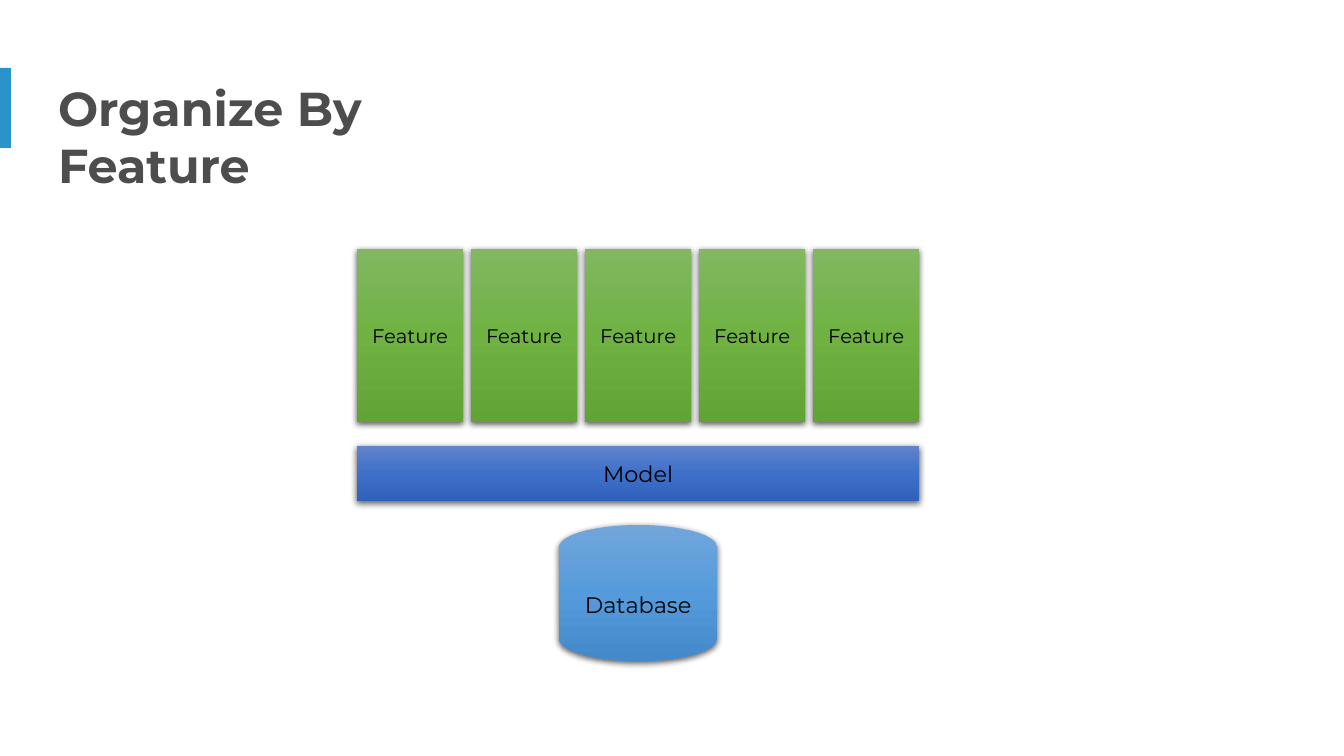
from pptx import Presentation
from pptx import util as u
from pptx.dml.color import RGBColor
from pptx.enum import shapes, text
from pptx.oxml import parse_xml
from pptx.oxml.ns import nsdecls, qn

PX = 914400 / 100.8
COLORS = {"ink": "000000", "title": "4D4D4D", "accent": "2993CA"}
GRADIENTS = {
    "feature": ["81B861", "6FB242", "62A336"],
    "model": ["6183CB", "3E70CA", "3062BB"],
    "database": ["71A6DB", "559BDB", "448ACA"],
}
RECT = shapes.MSO_SHAPE.RECTANGLE
DISK = shapes.MSO_SHAPE.FLOWCHART_MAGNETIC_DISK


class SlideBuilder:
    def __init__(self, slide):
        self.slide = slide
        self.font = "Montserrat"

    def px(self, *lengths):
        return [u.Emu(round(length * PX)) for length in lengths]

    def label(self, frame, words, size, color, bold=False):
        run = frame.paragraphs[0].add_run()
        run.text = words
        style = {"name": self.font, "size": u.Pt(size), "bold": bold}
        for key, value in style.items():
            setattr(run.font, key, value)
        run.font.color.rgb = RGBColor.from_string(COLORS[color])

    def bar(self, box, color, kind=RECT):
        shape = self.slide.shapes.add_shape(kind, *self.px(*box))
        shape.shadow.inherit = False
        shape.line.fill.background()
        shape.fill.solid()
        shape.fill.fore_color.rgb = RGBColor.from_string(color)
        return shape

    def block(self, box, words, size, gradient, kind=RECT):
        colors = GRADIENTS[gradient]
        shape = self.bar(box, colors[1], kind)
        properties = shape._element.spPr
        # Three-stop vertical gradient
        stops = "".join(
            f'<a:gs pos="{i * 50000}"><a:srgbClr val="{color}"/></a:gs>'
            for i, color in enumerate(colors))
        properties.replace(properties.find(qn("a:solidFill")), parse_xml(
            f'<a:gradFill {nsdecls("a")} rotWithShape="1"><a:gsLst>{stops}</a:gsLst>'
            '<a:lin ang="5400000" scaled="0"/></a:gradFill>'))
        # Soft shadow below
        properties.find(qn("a:effectLst")).append(parse_xml(
            f'<a:outerShdw {nsdecls("a")} blurRad="57150" dist="19050" dir="5400000" '
            'algn="ctr" rotWithShape="0"><a:srgbClr val="000000">'
            '<a:alpha val="63000"/></a:srgbClr></a:outerShdw>'))
        frame = shape.text_frame
        frame.vertical_anchor = text.MSO_ANCHOR.MIDDLE
        frame.paragraphs[0].alignment = text.PP_ALIGN.CENTER
        self.label(frame, words, size, "ink")

    def title(self, box, words, size):
        frame = self.slide.shapes.add_textbox(*self.px(*box)).text_frame
        layout = {"margin_left": 0, "margin_top": 0, "margin_right": 0,
                  "margin_bottom": 0, "word_wrap": True}
        for key, value in layout.items():
            setattr(frame, key, value)
        self.label(frame, words, size, "title", bold=True)


def main():
    deck = Presentation()
    deck.slide_width, deck.slide_height = u.Inches(13.33), u.Inches(7.5)
    builder = SlideBuilder(deck.slides.add_slide(deck.slide_layouts[6]))

    # Feature columns
    left, pitch, width, count = 357, 114, 106, 5
    for column in range(count):
        builder.block((left + column * pitch, 249, width, 173), "Feature", 14, "feature")

    # Shared layers, spanning or centred under the columns
    span = (count - 1) * pitch + width
    disk_width = 158
    builder.block((left + (span - disk_width) // 2, 525, disk_width, 136),
                  "Database", 16, "database", DISK)
    builder.block((left, 446, span, 55), "Model", 16, "model")

    # Heading and accent bar
    builder.title((58, 79, 490, 57), "Organize By Feature", 34)
    builder.bar((0, 68, 11, 80), COLORS["accent"])

    deck.save("out.pptx")


if __name__ == "__main__":
    main()
